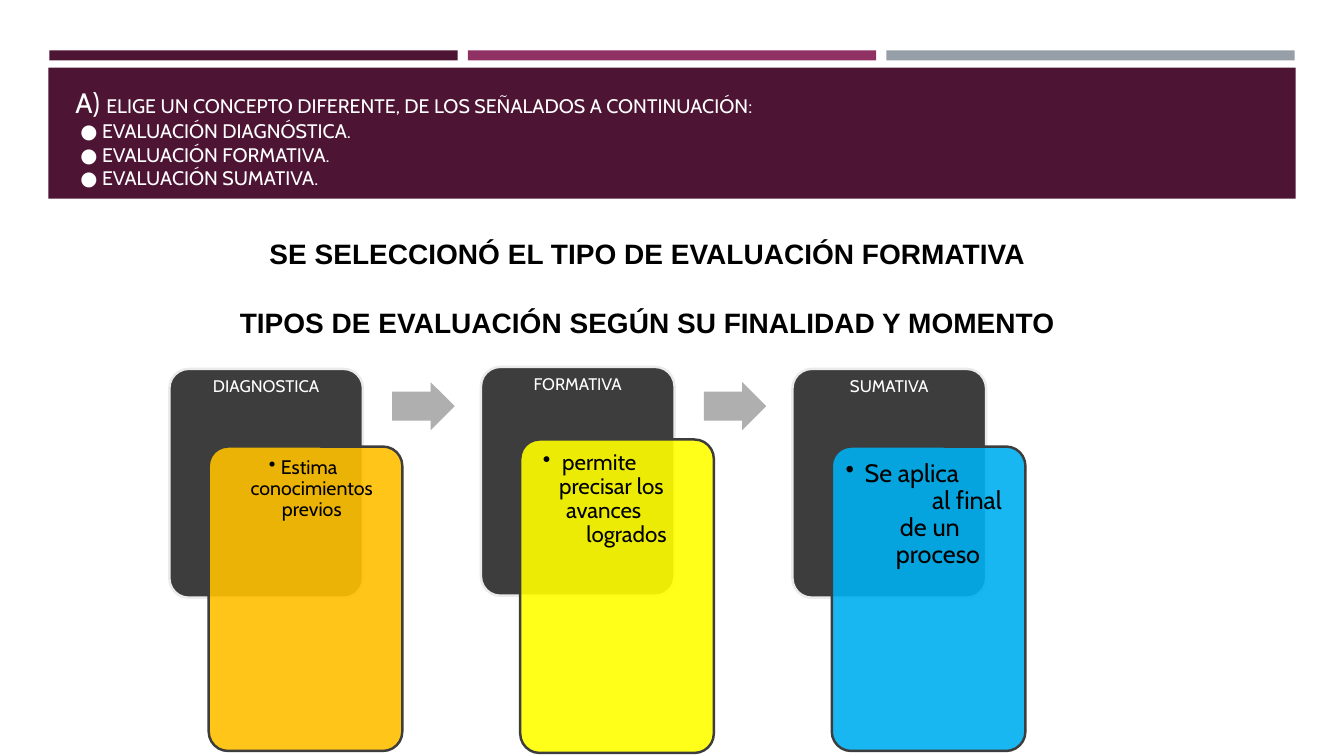
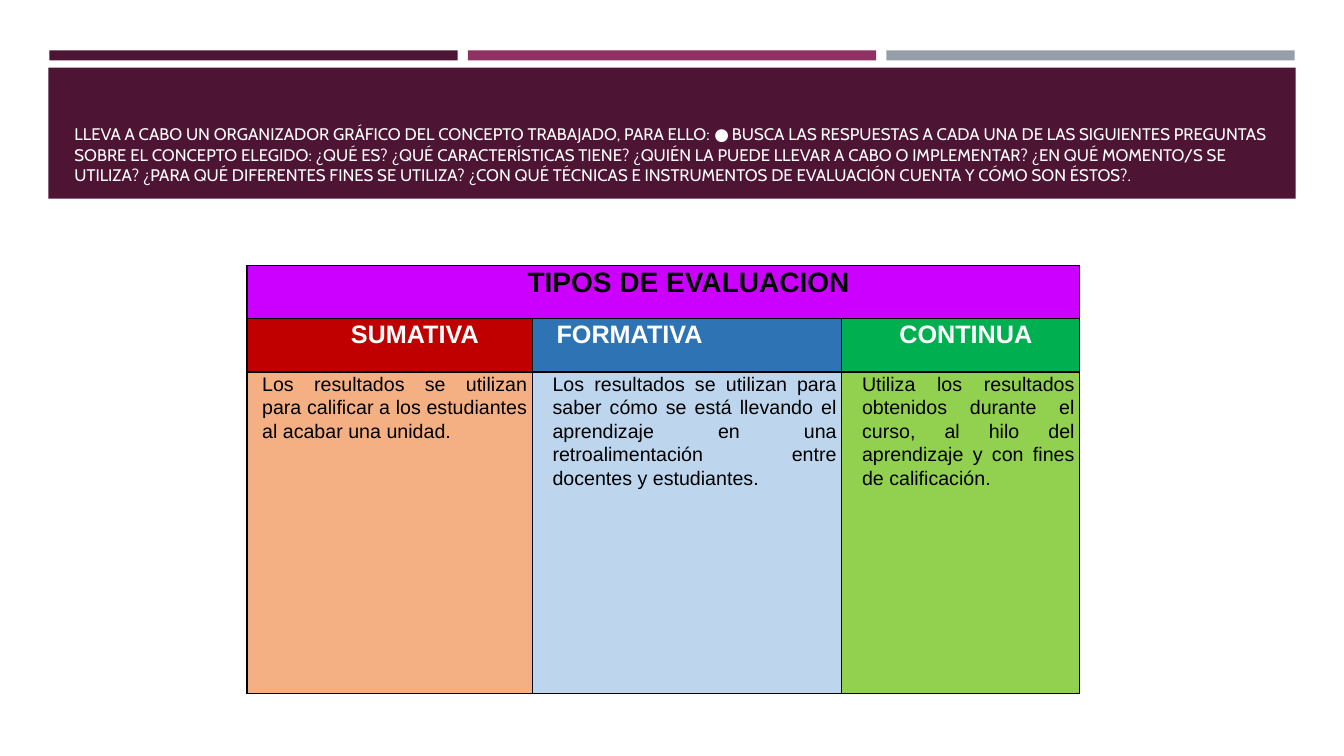
import pptx
import pptx.dml.color
import pptx.enum.shapes
import pptx.enum.text
import pptx.oxml
import pptx.oxml.ns
import pptx.util
from lxml import etree

Inches = pptx.util.Inches
Pt = pptx.util.Pt
ALIGN = pptx.enum.text.PP_ALIGN
ANCHOR = pptx.enum.text.MSO_ANCHOR
SHAPES = pptx.enum.shapes.MSO_SHAPE

# Shared palette and fonts
PLUM, MAGENTA, SLATE = "4D1434", "903163", "969FA7"
DARK, PALE, ARROW_GRAY = "3D3D3D", "EBEBEB", "AFAFAF"
BLACK, WHITE = "000000", "FFFFFF"
THEME_FONT, PLAIN_FONT = "Cabin", "Arial"

# Title text: paragraphs of (left indent, [(text, size), ...])
CONCEPT_TITLE = [
    (0, [("A) ", 20),
         ("ELIGE UN CONCEPTO DIFERENTE, DE LOS SEÑALADOS A CONTINUACIÓN:", 14)]),
    (0.05, [("● EVALUACIÓN DIAGNÓSTICA.", 14)]),
    (0.05, [("● EVALUACIÓN FORMATIVA.", 14)]),
    (0.05, [("● EVALUACIÓN SUMATIVA.", 14)]),
]
ORGANIZER_TITLE = [(0, [(
    "LLEVA A CABO UN ORGANIZADOR GRÁFICO DEL CONCEPTO TRABAJADO, PARA ELLO: "
    "● BUSCA LAS RESPUESTAS A CADA UNA DE LAS SIGUIENTES PREGUNTAS SOBRE EL "
    "CONCEPTO ELEGIDO: ¿QUÉ ES? ¿QUÉ CARACTERÍSTICAS TIENE? ¿QUIÉN LA PUEDE "
    "LLEVAR A CABO O IMPLEMENTAR? ¿EN QUÉ MOMENTO/S SE UTILIZA? ¿PARA QUÉ "
    "DIFERENTES FINES SE UTILIZA? ¿CON QUÉ TÉCNICAS E INSTRUMENTOS DE "
    "EVALUACIÓN CUENTA Y CÓMO SON ÉSTOS?.", 12)])]

HEADINGS = ["SE SELECCIONÓ EL TIPO DE EVALUACIÓN FORMATIVA",
            "TIPOS DE EVALUACIÓN SEGÚN SU FINALIDAD Y MOMENTO"]

# Steps: lines are (text, indent from the card's text edge)
STEPS = [
    dict(label="DIAGNOSTICA", top=3.66, card_top=4.43, card_height=3.02,
         fill="FFC000", size=14, inset=0.05, hang=0.12,
         lines=[("Estima", 0.66), ("conocimientos", 0.36), ("previos", 0.67)]),
    dict(label="FORMATIVA", top=3.64, card_top=4.36, card_height=3.11,
         fill="FFFF00", size=16, inset=0.06, hang=0.19,
         lines=[("permite", 0.36), ("precisar los", 0.33),
                ("avances", 0.4), ("logrados", 0.6)]),
    dict(label="SUMATIVA", top=3.66, card_top=4.43, card_height=3.02,
         fill="00B0F0", size=18, inset=0.08, hang=0.19,
         lines=[("Se aplica", 0.27), ("al final", 0.94),
                ("de un", 0.62), ("proceso", 0.58)]),
]
STEP_LEFT, STEP_PITCH, STEP_WIDTH = 1.68, 3.09, 1.92

# Table rows: height, text format, cells of (text, fill, indent, alignment)
COLUMN_WIDTHS = [2.83, 3.07, 2.36]
TABLE_ROWS = [
    (0.53, dict(size=20, color=BLACK, bold=True),
     [("TIPOS DE EVALUACION", "CC00FF", 0.5, ALIGN.CENTER)]),
    (0.53, dict(size=18, color=WHITE, bold=True),
     [("SUMATIVA", "C00000", 0.5, ALIGN.CENTER),
      ("FORMATIVA", "2E74B5", 0.19, ALIGN.LEFT),
      ("CONTINUA", "00B050", 0.1, ALIGN.CENTER)]),
    (3.19, dict(size=14, color=BLACK),
     [("Los resultados se utilizan para calificar a los estudiantes al acabar "
       "una unidad.", "F4B083", 0.1, ALIGN.JUSTIFY),
      ("Los resultados se utilizan para saber cómo se está llevando el "
       "aprendizaje en una retroalimentación entre docentes y estudiantes.",
       "BDD6EE", 0.15, ALIGN.JUSTIFY),
      ("Utiliza los resultados obtenidos durante el curso, al hilo del "
       "aprendizaje y con fines de calificación.",
       "92D050", 0.15, ALIGN.JUSTIFY)]),
]


def rgb(value):
    return pptx.dml.color.RGBColor.from_string(value)


def assign(target, values):
    for name, value in values.items():
        setattr(target, name, value)


def paint(fill, color):
    fill.solid()
    fill.fore_color.rgb = rgb(color)


def xml_child(parent, tag, **attributes):
    return etree.SubElement(parent, pptx.oxml.ns.qn(tag), attributes)


def add_span(para, text, size, color, font=THEME_FONT, bold=False):
    span = para.add_run()
    span.text = text
    assign(span.font, dict(name=font, size=Pt(size), bold=bold))
    span.font.color.rgb = rgb(color)


def indent(para, left, first=0):
    properties = para._p.get_or_add_pPr()
    properties.set("marL", str(Inches(left)))
    properties.set("indent", str(Inches(first)))
    return properties


def next_para(frame, index):
    return frame.paragraphs[0] if index == 0 else frame.add_paragraph()


def add_box(page, at, anchor=ANCHOR.TOP):
    frame = page.shapes.add_textbox(*map(Inches, at)).text_frame
    assign(frame, dict(word_wrap=True, vertical_anchor=anchor))
    return frame


def add_block(page, kind, at, fill, line=None, opacity=100):
    block = page.shapes.add_shape(kind, *map(Inches, at))
    block.shadow.inherit = False
    paint(block.fill, fill)
    if opacity < 100:
        color = block.fill._xPr.find(".//" + pptx.oxml.ns.qn("a:srgbClr"))
        xml_child(color, "a:alpha", val=str(opacity * 1000))
    if line:
        paint(block.line.fill, line)
        block.line.width = Pt(1.75)
    else:
        block.line.fill.background()
    return block


def add_card(page, at, fill, line, inset, opacity=100):
    card = add_block(page, SHAPES.ROUNDED_RECTANGLE, at, fill, line, opacity)
    card.adjustments[0] = 0.1
    frame = card.text_frame
    assign(frame, dict(word_wrap=True, vertical_anchor=ANCHOR.TOP,
                       margin_left=0, margin_right=0, margin_top=Inches(inset)))
    return frame


def add_page(deck, title, title_at):
    """Blank page with the three bars, the title band and its text."""
    page = deck.slides.add_slide(deck.slide_layouts[6])
    for index, color in enumerate([PLUM, MAGENTA, SLATE]):
        add_block(page, SHAPES.RECTANGLE,
                  (0.49 + index * 4.15, 0.5, 4.05, 0.1), color)
    add_block(page, SHAPES.RECTANGLE, (0.48, 0.67, 12.37, 1.3), PLUM)
    frame = add_box(page, title_at, ANCHOR.BOTTOM)
    for index, (left, spans) in enumerate(title):
        para = next_para(frame, index)
        indent(para, left)
        for text, size in spans:
            add_span(para, text, size, WHITE)
    return page


def add_headings(page):
    frame = add_box(page, (1.96, 2.3, 8.92, 1.15))
    for index, text in enumerate(HEADINGS):
        para = next_para(frame, index)
        assign(para, dict(alignment=ALIGN.CENTER, space_after=Pt(25)))
        add_span(para, text, 20, BLACK, PLAIN_FONT, bold=True)


def add_step(page, left, step):
    # Dark card with the label
    frame = add_card(page, (left, step["top"], STEP_WIDTH, 2.27),
                     DARK, PALE, 0.03)
    para = frame.paragraphs[0]
    assign(para, dict(alignment=ALIGN.CENTER, line_spacing=0.9))
    add_span(para, step["label"], 12, WHITE)

    # Translucent card with the stepped lines
    frame = add_card(
        page, (left + 0.39, step["card_top"], STEP_WIDTH, step["card_height"]),
        step["fill"], DARK, step["inset"], opacity=90)
    for index, (text, offset) in enumerate(step["lines"]):
        para = next_para(frame, index)
        assign(para, dict(alignment=ALIGN.LEFT, line_spacing=0.9))
        if index == 0:
            properties = indent(para, offset, -step["hang"])
            xml_child(properties, "a:buChar", char="•")
        else:
            indent(para, offset)
        add_span(para, text, step["size"], BLACK)


def add_steps(page):
    for index, step in enumerate(STEPS):
        left = STEP_LEFT + index * STEP_PITCH
        add_step(page, left, step)
        if index < len(STEPS) - 1:
            arrow = add_block(page, SHAPES.RIGHT_ARROW,
                              (left + 2.21, 3.79, 0.62, 0.48), ARROW_GRAY)
            arrow.adjustments[0] = 0.6


def add_borders(cell):
    properties = cell._tc.get_or_add_tcPr()
    for side in ("a:lnL", "a:lnR", "a:lnT", "a:lnB"):
        line = xml_child(properties, side, w=str(Pt(1)))
        xml_child(xml_child(line, "a:solidFill"), "a:srgbClr", val=BLACK)


def add_types_table(page):
    heights = [row[0] for row in TABLE_ROWS]
    table = page.shapes.add_table(
        len(heights), len(COLUMN_WIDTHS), Inches(2.45), Inches(2.63),
        Inches(sum(COLUMN_WIDTHS)), Inches(sum(heights))).table
    assign(table, dict(first_row=False, horz_banding=False))
    for column, width in zip(table.columns, COLUMN_WIDTHS):
        column.width = Inches(width)
    for cell in table.iter_cells():
        add_borders(cell)
        paint(cell.fill, TABLE_ROWS[0][2][0][1])
    table.cell(0, 0).merge(table.cell(0, len(COLUMN_WIDTHS) - 1))

    for row, (height, style, entries) in enumerate(TABLE_ROWS):
        table.rows[row].height = Inches(height)
        for column, (text, fill, left, alignment) in enumerate(entries):
            cell = table.cell(row, column)
            assign(cell, dict(margin_left=Inches(0.05), margin_top=0,
                              margin_right=Inches(0.05), margin_bottom=0))
            paint(cell.fill, fill)
            para = cell.text_frame.paragraphs[0]
            assign(para, dict(alignment=alignment, line_spacing=1.07))
            indent(para, left)
            add_span(para, text, font=PLAIN_FONT, **style)


def main():
    deck = pptx.Presentation()
    assign(deck, dict(slide_width=Inches(13.33), slide_height=Inches(7.5)))

    # Evaluation types by purpose and moment
    page = add_page(deck, CONCEPT_TITLE, (0.65, 0.42, 12.06, 1.51))
    add_headings(page)
    add_steps(page)

    # Graphic organizer
    page = add_page(deck, ORGANIZER_TITLE, (0.64, 0.77, 12.06, 1.11))
    add_types_table(page)

    deck.save("out.pptx")


if __name__ == "__main__":
    main()
